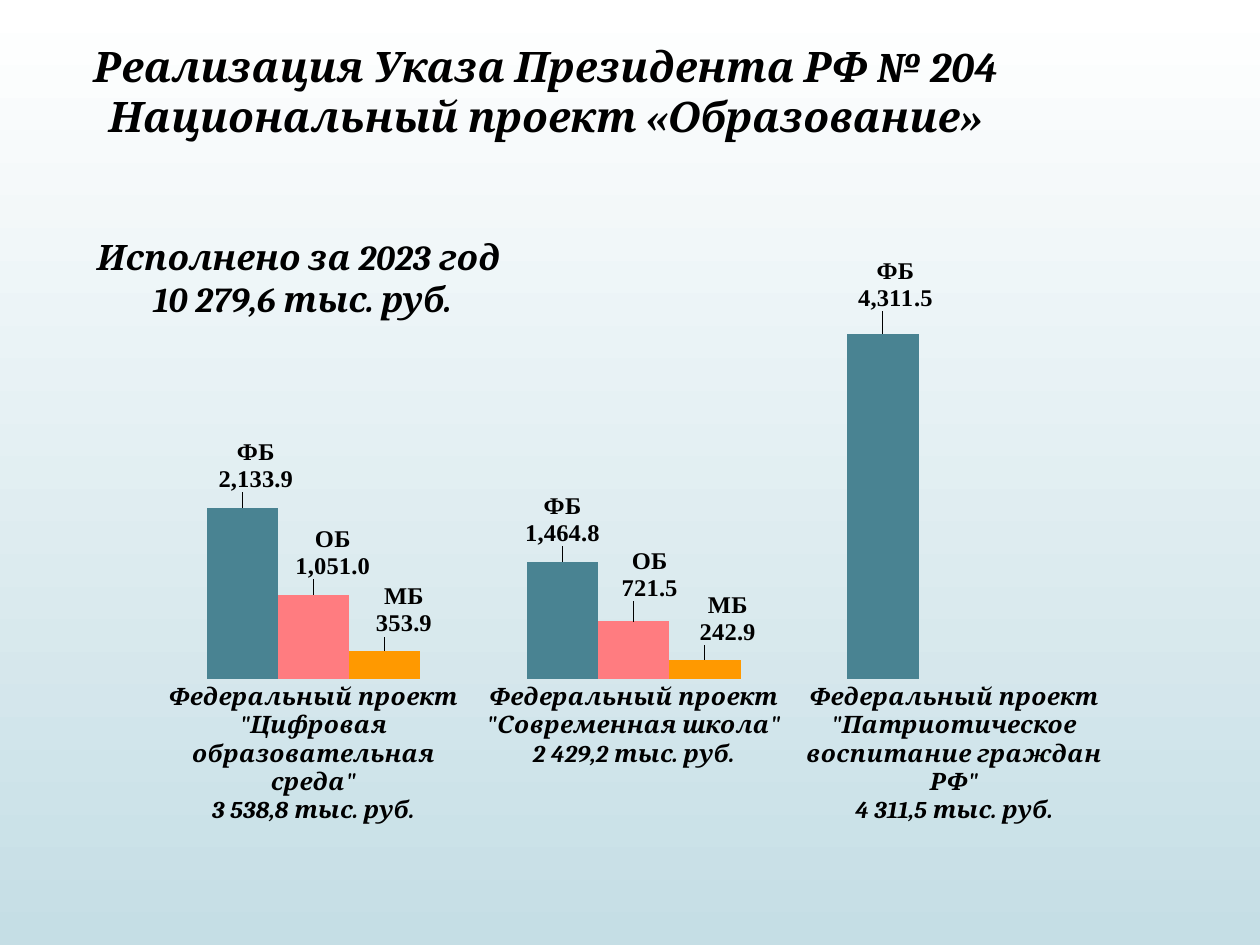
import lxml.etree
import pptx
import pptx.chart.data
import pptx.dml.color
import pptx.enum.chart
import pptx.enum.text
import pptx.oxml.ns
import pptx.util

Pt = pptx.util.Pt
BLACK = "000000"
NUMBER_FORMAT = "#,##0.0"
CATEGORIES = [
    'Федеральный проект\n"Цифровая образовательная среда"\n3 538,8 тыс. руб.',
    'Федеральный проект\n"Современная школа"\n2 429,2 тыс. руб.',
    'Федеральный проект\n"Патриотическое воспитание граждан РФ"\n4 311,5 тыс. руб.',
]
# Budget level, colour, values, label shifts in points
BUDGETS = [
    ("ФБ", "498392", [2133.9, 1464.8, 4311.5], [(8, -6), (0, -6), (7, -10)]),
    ("ОБ", "FF7C80", [1051, 721.5, None], [(11, -6), (9, -9)]),
    ("МБ", "FF9900", [353.9, 242.9, None], [(11, -5), (13, -5)]),
]
CHART_BOX = (36.7, 131.8, 652.3, 339.8)


def color(hex_text):
    return pptx.dml.color.RGBColor.from_string(hex_text)


def style_font(font, name, size, bold=False, italic=False):
    font.name = name
    font.size = Pt(size)
    font.bold = bold
    font.italic = italic
    font.color.rgb = color(BLACK)


def element(tag, **attributes):
    return lxml.etree.Element(pptx.oxml.ns.qn(tag), attributes)


def manual_layout(**values):
    """Chart layout whose values are fractions of the chart size."""
    layout = element("c:layout")
    manual = element("c:manualLayout")
    layout.append(manual)
    for name, value in values.items():
        manual.append(element("c:" + name, val=str(value)))
    return layout


def add_background(page):
    fill = page.background.fill
    fill.gradient()
    fill.gradient_angle = 270
    for stop, hex_text in zip(fill.gradient_stops, ("FFFFFF", "C5DEE5")):
        stop.color.rgb = color(hex_text)


def add_heading(page, box, paragraphs, size):
    frame = page.shapes.add_textbox(*map(Pt, box)).text_frame
    frame.word_wrap = True
    frame.vertical_anchor = pptx.enum.text.MSO_ANCHOR.MIDDLE
    for index, text in enumerate(paragraphs):
        para = frame.add_paragraph() if index else frame.paragraphs[0]
        para.text = text
        para.alignment = pptx.enum.text.PP_ALIGN.CENTER
        style_font(para.font, "Cambria", size, bold=True, italic=True)


def add_point_label(point, shift):
    """Show budget name over value, moved from the end of the bar."""
    label = point.data_label
    style_font(label.font, "Times New Roman", 14, bold=True)
    label.position = pptx.enum.chart.XL_LABEL_POSITION.OUTSIDE_END
    node = point.data_label._dLbl
    node.find(pptx.oxml.ns.qn("c:showSerName")).set("val", "1")
    layout = manual_layout(x=round(shift[0] / CHART_BOX[2], 3),
                           y=round(shift[1] / CHART_BOX[3], 3))
    node.insert(1, layout)
    node.insert(2, element("c:numFmt", formatCode=NUMBER_FORMAT, sourceLinked="0"))
    separator = element("c:separator")
    separator.text = "\n"
    node.append(separator)


def add_budget_chart(page):
    data = pptx.chart.data.CategoryChartData(number_format=NUMBER_FORMAT)
    data.categories = CATEGORIES
    for name, _, values, _ in BUDGETS:
        data.add_series(name, values)
    kind = pptx.enum.chart.XL_CHART_TYPE.COLUMN_CLUSTERED
    chart = page.shapes.add_chart(kind, *map(Pt, CHART_BOX), data).chart
    chart.has_legend = False
    chart.has_title = False
    style_font(chart.font, "Quicksand", 10)

    # Axes
    axis = chart.category_axis
    axis.major_tick_mark = pptx.enum.chart.XL_TICK_MARK.NONE
    axis.format.line.fill.background()
    style_font(axis.tick_labels.font, "Cambria", 14, bold=True, italic=True)
    scale = chart.value_axis
    scale.minimum_scale, scale.maximum_scale = 0, 5000
    scale.has_major_gridlines = False
    scale.tick_labels.number_format = NUMBER_FORMAT
    scale.tick_labels.number_format_is_linked = False
    scale.visible = False

    # Bars and their labels
    plot = chart.plots[0]
    plot.gap_width = 150
    plot.overlap = 0
    plot.vary_by_categories = False
    for series, (_, fill, _, shifts) in zip(plot.series, BUDGETS):
        series.format.fill.solid()
        series.format.fill.fore_color.rgb = color(fill)
        for index, shift in enumerate(shifts):
            add_point_label(series.points[index], shift)

    # Plot area
    area = chart._chartSpace.chart.plotArea
    for old in area.findall(pptx.oxml.ns.qn("c:layout")):
        area.remove(old)
    area.insert(0, manual_layout(layoutTarget="inner", xMode="edge", yMode="edge",
                                 x=0.078, y=0.082, w=0.842, h=0.688))


def main():
    deck = pptx.Presentation()
    deck.slide_width, deck.slide_height = Pt(720), Pt(540)
    page = deck.slides.add_slide(deck.slide_layouts[6])
    add_background(page)
    add_heading(page, (-31.7, 18, 692, 67.7),
                ["Реализация Указа Президента РФ № 204 \n"
                 "Национальный проект «Образование» "], 24)
    add_heading(page, (-17.3, 131, 380.2, 55.4),
                ["Исполнено за 2023 год ", "10 279,6 тыс. руб."], 20)
    add_budget_chart(page)
    deck.save("out.pptx")


if __name__ == "__main__":
    main()
